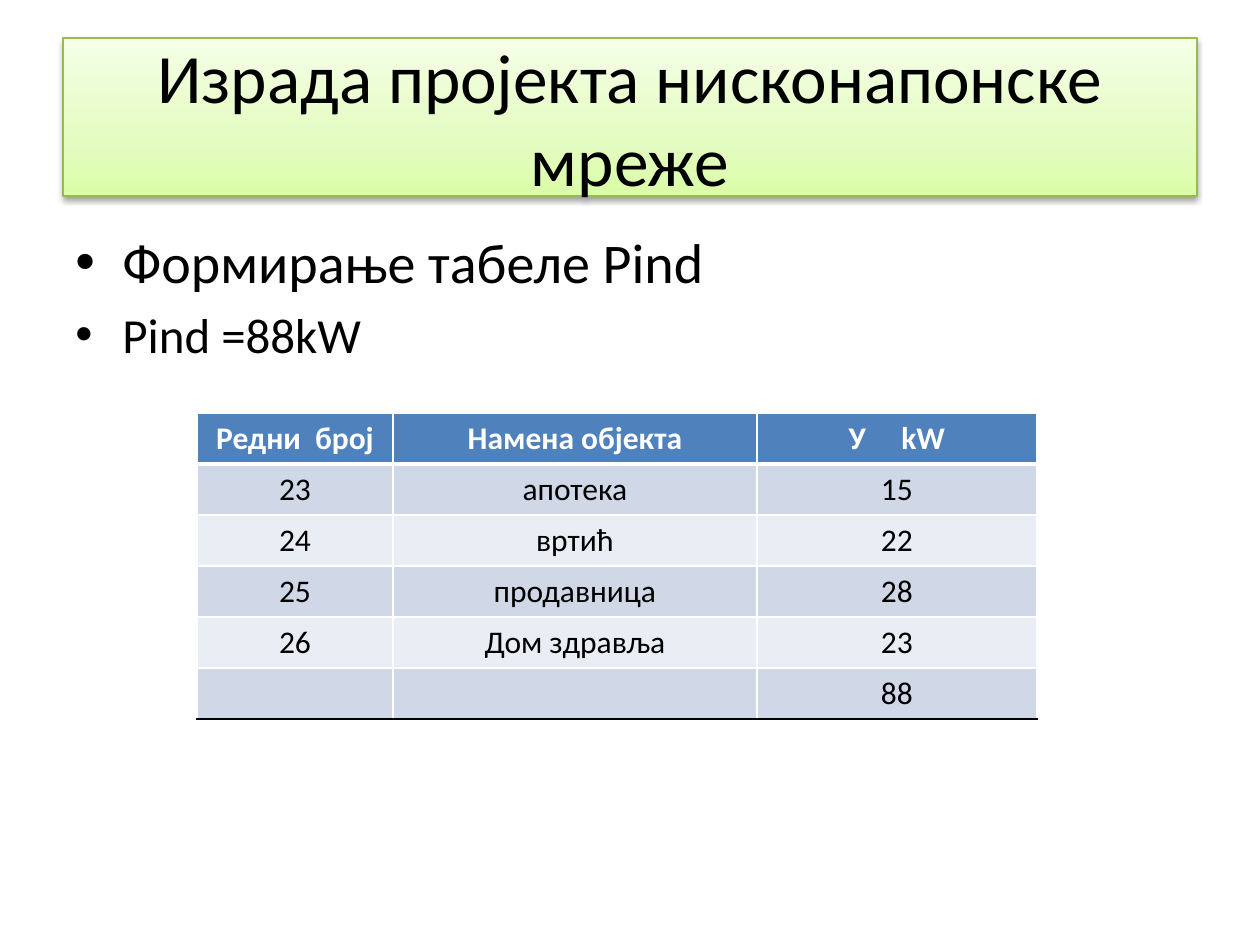
from copy import deepcopy

from lxml.etree import SubElement
from pptx import Presentation
from pptx.dml.color import RGBColor
from pptx.enum.shapes import MSO_SHAPE as SHAPE
from pptx.enum.text import MSO_ANCHOR as ANCHOR, PP_ALIGN as ALIGN
from pptx.oxml.ns import qn
from pptx.util import Emu, Pt

FONT = "Calibri"
BLACK = RGBColor(0x00, 0x00, 0x00)
WHITE = RGBColor(0xFF, 0xFF, 0xFF)
GREEN_LINE = RGBColor(0x98, 0xB9, 0x55)
GREEN_STOPS = [
    (0, RGBColor(0xDA, 0xFD, 0xA7)),
    (0.35, RGBColor(0xE4, 0xFC, 0xC2)),
    (1, RGBColor(0xF5, 0xFF, 0xE7)),
]
HEADER = RGBColor(0x4F, 0x81, 0xBD)
BANDS = [RGBColor(0xD0, 0xD8, 0xE8), RGBColor(0xE9, 0xED, 0xF4)]

COLUMNS = [196, 364, 280]
ROW_HEIGHT = 51
ROWS = [
    ["Редни  број", "Намена објекта", "У     kW"],
    ["23", "апотека", "15"],
    ["24", "вртић", "22"],
    ["25", "продавница", "28"],
    ["26", "Дом здравља", "23"],
    ["", "", "88"],
]


def px(n):
    return Emu(round(n * 914400 / 126))


def add_run(p, text, size, color=BLACK, bold=False):
    r = p.add_run()
    r.text = text
    r.font.name = FONT
    r.font.size = Pt(size)
    r.font.bold = bold
    r.font.color.rgb = color


def fill_gradient(sp, stops):
    sp.fill.gradient()
    sp.fill.gradient_angle = 90
    gs_list = next(sp._element.spPr.iter(qn("a:gsLst")))
    gs_list.insert(1, deepcopy(gs_list[0]))
    for stop, (position, color) in zip(sp.fill.gradient_stops, stops):
        stop.position = position
        stop.color.rgb = color


def add_shadow(sp):
    sp.shadow.inherit = False
    effects = sp._element.spPr.find(qn("a:effectLst"))
    shadow = SubElement(effects, qn("a:outerShdw"), blurRad=str(Pt(3.1)),
                        dist=str(Pt(1.6)), dir="5400000", rotWithShape="0")
    color = SubElement(shadow, qn("a:srgbClr"), val=str(BLACK))
    SubElement(color, qn("a:alpha"), val="38000")


def add_title(s, text):
    sp = s.shapes.add_shape(SHAPE.RECTANGLE, px(63), px(38), px(1134), px(158))
    fill_gradient(sp, GREEN_STOPS)
    sp.line.color.rgb = GREEN_LINE
    sp.line.width = Pt(0.75)
    add_shadow(sp)
    tf = sp.text_frame
    tf.word_wrap = True
    tf.vertical_anchor = ANCHOR.MIDDLE
    p = tf.paragraphs[0]
    p.alignment = ALIGN.CENTER
    add_run(p, text, 39.6)


def add_bullets(s, items):
    tf = s.shapes.add_textbox(px(63), px(221), px(1134), px(624)).text_frame
    tf.word_wrap = True
    for i, (text, size) in enumerate(items):
        p = tf.add_paragraph() if i else tf.paragraphs[0]
        props = p._p.get_or_add_pPr()
        props.set("marL", str(px(47)))
        props.set("indent", str(-px(47)))
        before = SubElement(props, qn("a:spcBef"))
        SubElement(before, qn("a:spcPct"), val="20000")
        SubElement(props, qn("a:buFont"), typeface="Arial")
        SubElement(props, qn("a:buChar"), char="•")
        add_run(p, text, size)


def set_border(cell, side, color, width):
    ln = SubElement(cell._tc.get_or_add_tcPr(), qn(f"a:ln{side}"), w=str(Pt(width)))
    fill = SubElement(ln, qn("a:solidFill"))
    SubElement(fill, qn("a:srgbClr"), val=str(color))


def style_cell(cell, text, row):
    is_header = row == 0
    is_last = row == len(ROWS) - 1
    for side in "LR":
        set_border(cell, side, WHITE, 1)
    set_border(cell, "T", WHITE, 3 if row == 1 else 1)
    set_border(cell, "B", BLACK if is_last else WHITE, 3 if is_header else 1)
    cell.fill.solid()
    cell.fill.fore_color.rgb = HEADER if is_header else BANDS[(row - 1) % 2]
    p = cell.text_frame.paragraphs[0]
    p.alignment = ALIGN.CENTER
    if text:
        add_run(p, text, 18, WHITE if is_header else BLACK, is_header)


def add_load_table(s):
    frame = s.shapes.add_table(len(ROWS), len(COLUMNS), px(197), px(413),
                               px(sum(COLUMNS)), px(ROW_HEIGHT * len(ROWS)))
    table = frame.table
    for column, width in zip(table.columns, COLUMNS):
        column.width = px(width)
    for i, texts in enumerate(ROWS):
        table.rows[i].height = px(ROW_HEIGHT)
        for j, text in enumerate(texts):
            style_cell(table.cell(i, j), text, i)


def main():
    prs = Presentation()
    prs.slide_width = px(1260)
    prs.slide_height = px(945)
    s = prs.slides.add_slide(prs.slide_layouts[6])
    add_title(s, "Израда пројекта нисконапонске мреже")
    add_bullets(s, [("Формирање табеле Pind", 32), ("Pind =88kW", 28)])
    add_load_table(s)
    prs.save("out.pptx")


if __name__ == "__main__":
    main()
